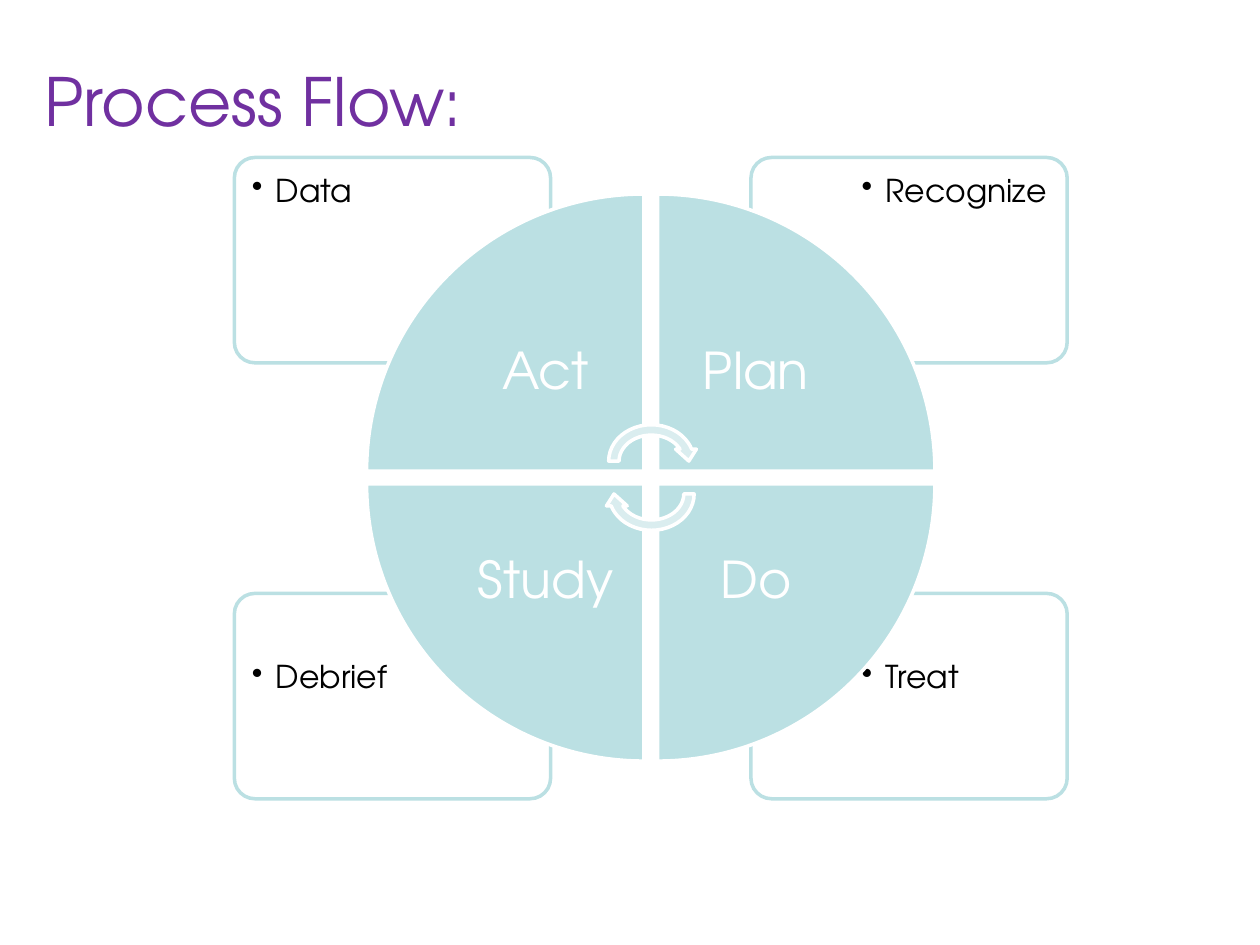
"""Build the Plan-Do-Study-Act process flow slide."""
import pptx
import pptx.util
import pptx.dml.color
import pptx.enum.shapes
import pptx.enum.text
import lxml.etree

TITLE = "Process Flow:"
STAGES = [
    {"stage": "Act", "note": "Data", "column": 0, "row": 0, "turn": 0},
    {"stage": "Plan", "note": "Recognize", "column": 1, "row": 0, "turn": 90},
    {"stage": "Do", "note": "Treat", "column": 1, "row": 1, "turn": 180},
    {"stage": "Study", "note": "Debrief", "column": 0, "row": 1, "turn": 270},
]
ARROWS = [(333, 0), (359, 180)]

THEME = {
    "font": "TeX Gyre Adventor",
    "title": "7030A0", "teal": "BBE0E3", "pale": "DAEDEF",
    "white": "FFFFFF", "black": "000000",
    "title_size": 38, "stage_size": 29, "note_size": 18, "line": 2,
}
SCALE = 9144
CARD_LEFT, CARD_TOP, CARD_WIDTH, CARD_HEIGHT = 186, 125, 251, 163
CARD_STEP_X, CARD_STEP_Y = 410, 346
NOTE_WIDTH, NOTE_HEIGHT, NOTE_EDGE = 169, 115, 4
WEDGE_LEFT, WEDGE_TOP, WEDGE, WEDGE_STEP = 291, 154, 220, 230
LABEL = 156

SHAPES = pptx.enum.shapes.MSO_SHAPE
ALIGN = pptx.enum.text.PP_ALIGN
ANCHOR = pptx.enum.text.MSO_ANCHOR


def px(*lengths):
    """Turn px lengths into EMU."""
    return [pptx.util.Emu(length * SCALE) for length in lengths]


def color(name):
    """Look up a theme colour."""
    return pptx.dml.color.RGBColor.from_string(THEME[name])


def add_figure(page, kind, place, fill, line, turn=0):
    """Add a filled and outlined preset shape."""
    shape = page.shapes.add_shape(kind, *px(*place))
    shape.shadow.inherit = False
    shape.rotation = turn
    shape.fill.solid()
    shape.fill.fore_color.rgb = color(fill)
    shape.line.color.rgb = color(line)
    shape.line.width = pptx.util.Pt(THEME["line"])
    return shape


def write(box, text, size, ink, align=ALIGN.LEFT, anchor=ANCHOR.TOP,
          inset=10, spacing=0.9, bullet=False):
    """Fill a box with one formatted paragraph."""
    frame = box.text_frame
    frame.word_wrap = True
    frame.auto_size = pptx.enum.text.MSO_AUTO_SIZE.NONE
    frame.vertical_anchor = anchor
    frame.margin_left = frame.margin_right = px(inset)[0]
    frame.margin_top = frame.margin_bottom = px(inset)[0]
    para = frame.paragraphs[0]
    para.alignment = align
    para.line_spacing = spacing
    span = para.add_run()
    span.text = text
    span.font.name = THEME["font"]
    span.font.size = pptx.util.Pt(THEME[size])
    span.font.color.rgb = color(ink)
    if bullet:
        properties = para._p.get_or_add_pPr()
        indent = px(19)[0]
        properties.set("marL", str(indent))
        properties.set("indent", str(-indent))
        mark = lxml.etree.SubElement(properties, pptx.oxml.ns.qn("a:buChar"))
        mark.set("char", "•")


def add_card(page, note, column, row):
    """Add an outer card with its bulleted note."""
    left = CARD_LEFT + column * CARD_STEP_X
    top = CARD_TOP + row * CARD_STEP_Y
    card = add_figure(page, SHAPES.ROUNDED_RECTANGLE,
                      (left, top, CARD_WIDTH, CARD_HEIGHT), "white", "teal")
    card.adjustments[0] = 0.1
    note_left = left + (CARD_WIDTH - NOTE_WIDTH - NOTE_EDGE if column else NOTE_EDGE)
    note_top = top + (CARD_HEIGHT - NOTE_HEIGHT - NOTE_EDGE if row else NOTE_EDGE)
    box = page.shapes.add_textbox(*px(note_left, note_top, NOTE_WIDTH, NOTE_HEIGHT))
    write(box, note, "note_size", "black", bullet=True)


def add_wedge(page, stage, column, row, turn):
    """Add a quarter of the circle with its stage name."""
    left = WEDGE_LEFT + column * (WEDGE_STEP + 1)
    top = WEDGE_TOP + row * WEDGE_STEP
    add_figure(page, SHAPES.PIE_WEDGE, (left, top, WEDGE, WEDGE), "teal", "white", turn)
    inner = WEDGE - LABEL
    box = page.shapes.add_textbox(
        *px(left + inner * (1 - column), top + inner * (1 - row), LABEL, LABEL))
    write(box, stage, "stage_size", "white", align=ALIGN.CENTER,
          anchor=ANCHOR.MIDDLE, inset=23)


def main():
    """Build and save the deck."""
    deck = pptx.Presentation()
    deck.slide_width, deck.slide_height = px(1000, 750)
    page = deck.slides.add_slide(deck.slide_layouts[5])
    title = page.shapes.title
    title.left, title.top, title.width, title.height = px(25, 17, 850, 125)
    write(title, TITLE, "title_size", "title", anchor=ANCHOR.MIDDLE, spacing=1.0)
    for item in STAGES:
        add_card(page, item["note"], item["column"], item["row"])
    for item in STAGES:
        add_wedge(page, item["stage"], item["column"], item["row"], item["turn"])
    for top, turn in ARROWS:
        add_figure(page, SHAPES.CIRCULAR_ARROW, (479, top, 76, 66), "pale", "white", turn)
    deck.save("out.pptx")


if __name__ == "__main__":
    main()
